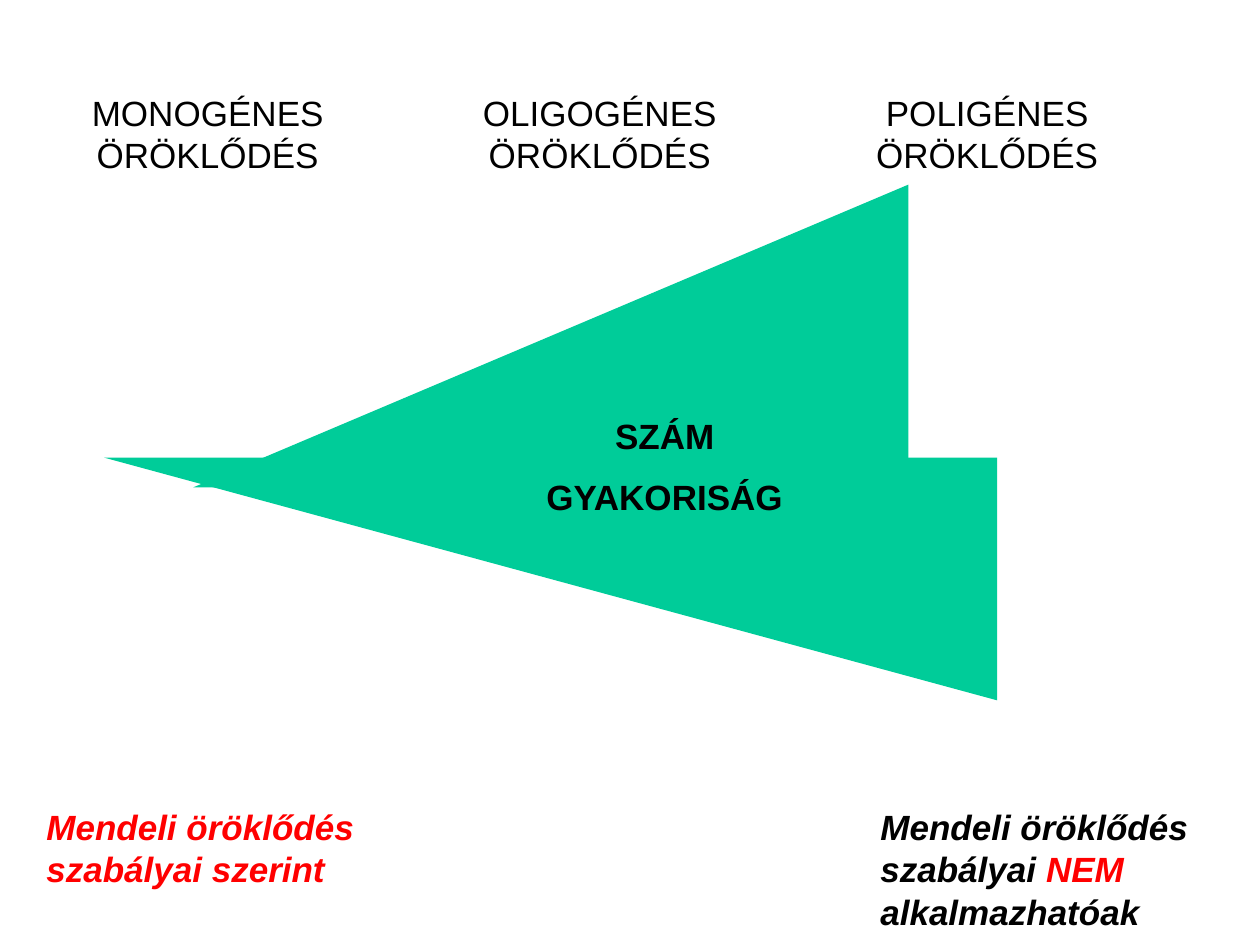
from pptx import Presentation
from pptx.dml.color import RGBColor
from pptx.enum.shapes import MSO_SHAPE as Shape
from pptx.enum.text import MSO_AUTO_SIZE as AutoSize, PP_ALIGN as Align
from pptx.util import Pt

BLACK, RED, GREEN = "000000", "FF0000", "00CC99"
HEADING_TOP, HEADING_HEIGHT = 49, 55.5
RULE_TOP = 457


def color(hex_value):
    return RGBColor.from_string(hex_value)


def add_text(slide, box, paragraphs, align=Align.LEFT, bold=False, italic=False):
    """Add a text box; each paragraph is a list of (text, colour) runs."""
    shape = slide.shapes.add_textbox(*map(Pt, box))
    frame = shape.text_frame
    frame.word_wrap = True
    frame.auto_size = AutoSize.SHAPE_TO_FIT_TEXT
    for index, runs in enumerate(paragraphs):
        paragraph = frame.add_paragraph() if index else frame.paragraphs[0]
        paragraph.alignment = align
        if index:
            paragraph.space_before = Pt(10.5)
        font = paragraph.font
        font.name, font.size = "Arial", Pt(20)
        font.bold, font.italic = bold, italic
        for text, run_color in runs:
            run = paragraph.add_run()
            run.text = text
            run.font.color.rgb = color(run_color)


def add_triangle(slide, box, rotation):
    shape = slide.shapes.add_shape(Shape.RIGHT_TRIANGLE, *map(Pt, box))
    shape.rotation = rotation
    shape.shadow.inherit = False
    shape.fill.solid()
    shape.fill.fore_color.rgb = color(GREEN)
    shape.line.fill.background()


def main():
    presentation = Presentation()
    presentation.slide_width, presentation.slide_height = Pt(720), Pt(540)
    slide = presentation.slides.add_slide(presentation.slide_layouts[6])

    headings = [
        ("MONOGÉNES", 36.7, 164),
        ("OLIGOGÉNES", 263.5, 158.5),
        ("POLIGÉNES", 490.3, 147.6),
    ]
    for kind, left, width in headings:
        add_text(slide, (left, HEADING_TOP, width, HEADING_HEIGHT),
                 [[(f"{kind} ÖRÖKLŐDÉS", BLACK)]], Align.CENTER)

    add_text(slide, (19.4, RULE_TOP, 238.3, 55.5),
             [[("Mendeli öröklődés szabályai szerint", RED)]],
             bold=True, italic=True)
    add_text(slide, (496, RULE_TOP, 224, 79.5),
             [[("Mendeli öröklődés szabályai ", BLACK), ("NEM ", RED),
               ("alkalmazhatóak", BLACK)]],
             bold=True, italic=True)

    add_triangle(slide, (59.5, 261.5, 510.3, 138.7), 180)
    add_triangle(slide, (228.2, -12.3, 173, 408.6), 270)

    add_text(slide, (280.5, 233.5, 198.7, 67),
             [[("SZÁM", BLACK)], [("GYAKORISÁG", BLACK)]],
             Align.CENTER, bold=True)

    presentation.save("out.pptx")


if __name__ == "__main__":
    main()
